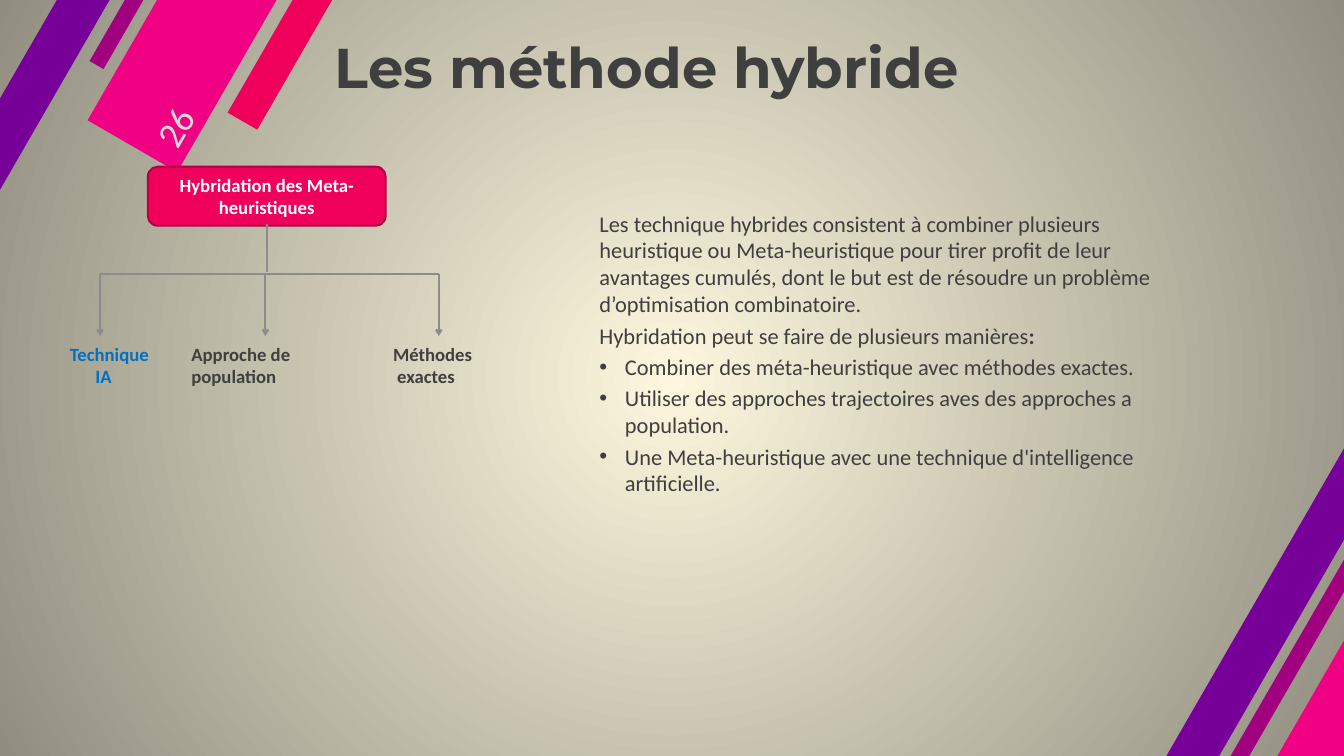
from lxml import etree
from pptx import Presentation
from pptx.dml.color import RGBColor
from pptx.enum.shapes import MSO_CONNECTOR, MSO_SHAPE
from pptx.enum.text import MSO_ANCHOR, MSO_AUTO_SIZE, PP_ALIGN
from pptx.oxml.ns import qn
from pptx.util import Inches, Pt

PINK = RGBColor(0xF0, 0x00, 0x82)
RED = RGBColor(0xEF, 0x00, 0x5A)
WINE = RGBColor(0xB1, 0x00, 0x43)
PLUM = RGBColor(0xA1, 0x00, 0x7E)
VIOLET = RGBColor(0x77, 0x00, 0x99)
DARK = RGBColor(0x3F, 0x3F, 0x3F)
GRAY = RGBColor(0x8C, 0x8C, 0x8C)
PALE = RGBColor(0xD9, 0xD9, 0xD9)
BLUE = RGBColor(0x00, 0x70, 0xC0)
WHITE = RGBColor(0xFF, 0xFF, 0xFF)
CREAM = RGBColor(0xFC, 0xF7, 0xDD)
STONE = RGBColor(0x91, 0x8E, 0x81)

RECT = MSO_SHAPE.RECTANGLE
ROUND = MSO_SHAPE.FLOWCHART_ALTERNATE_PROCESS
LINE = MSO_CONNECTOR.STRAIGHT
MIDDLE, TOP = MSO_ANCHOR.MIDDLE, MSO_ANCHOR.TOP
LEFT, CENTER = PP_ALIGN.LEFT, PP_ALIGN.CENTER
FIXED, GROW = MSO_AUTO_SIZE.NONE, MSO_AUTO_SIZE.SHAPE_TO_FIT_TEXT

COLS = 20
TILT = 300
INDENT = 0.38


class Deck:
    head, font = "Montserrat", "Calibri"

    def __init__(self):
        self.file = Presentation()
        self.file.slide_width = Inches(20)
        self.file.slide_height = Inches(11.25)
        self.cell = self.file.slide_width / COLS
        self.slide = self.file.slides.add_slide(self.file.slide_layouts[1])
        self.shapes = self.slide.shapes

    def grid(self, *spans):
        return [round(span * self.cell) for span in spans]

    def glow(self, inner, outer):
        fill = self.slide.background.fill
        fill.gradient()
        for stop, color, place in zip(fill.gradient_stops, (inner, outer), (0, 1)):
            stop.color.rgb = color
            stop.position = place
        lin = next(self.slide.element.iter(qn("a:lin")))
        ring = etree.Element(qn("a:path"), {"path": "circle"})
        etree.SubElement(ring, qn("a:fillToRect"), {side: "50000" for side in "ltrb"})
        lin.getparent().replace(lin, ring)

    def style(self, frame, size, color, bold=False, align=LEFT, font=None):
        for para in frame.paragraphs:
            para.alignment = align
            for run in para.runs:
                run.font.size = Pt(size)
                run.font.name = font or self.font
                run.font.bold = bold
                run.font.color.rgb = color

    def pad(self, frame, anchor):
        frame.word_wrap = True
        frame.auto_size = FIXED
        frame.vertical_anchor = anchor
        frame.margin_left, frame.margin_right = self.grid(0.18, 0.18)
        frame.margin_top, frame.margin_bottom = self.grid(0.09, 0.09)

    def block(self, kind, box, color):
        shape = self.shapes.add_shape(kind, *self.grid(*box))
        shape.shadow.inherit = False
        shape.fill.solid()
        shape.fill.fore_color.rgb = color
        shape.line.fill.background()
        return shape

    def band(self, box, color):
        self.block(RECT, box, color).rotation = TILT

    def place(self, holder, box):
        holder.left, holder.top, holder.width, holder.height = self.grid(*box)
        return holder.text_frame

    def title(self, text, box):
        frame = self.place(self.shapes.title, box)
        frame.text = text
        self.pad(frame, MIDDLE)
        self.style(frame, 60, DARK, True, font=self.head)

    def shift(self, para, left, hang, mark=None):
        props = para._p.get_or_add_pPr()
        margin, first = self.grid(left, hang)
        props.set("marL", str(margin))
        props.set("indent", str(first))
        if mark:
            etree.SubElement(props, qn("a:buChar"), {"char": mark})
        else:
            etree.SubElement(props, qn("a:buNone"))

    def body(self, intro, items, box):
        frame = self.place(self.slide.placeholders[1], box)
        frame.text = "\n".join(intro + items)
        self.pad(frame, TOP)
        for n, para in enumerate(frame.paragraphs):
            if n < len(intro):
                self.shift(para, 0, 0)
            else:
                self.shift(para, INDENT, -INDENT, "•")
        lead = frame.paragraphs[len(intro) - 1]
        colon = lead.add_run()
        colon.text = ":"
        self.style(frame, 24, DARK)
        colon.font.bold = True

    def page(self, text, box):
        shape = self.shapes.add_textbox(*self.grid(*box))
        shape.rotation = TILT
        shape.text_frame.text = text
        self.pad(shape.text_frame, MIDDLE)
        self.style(shape.text_frame, 40, PALE)

    def root(self, text, box):
        shape = self.block(ROUND, box, RED)
        shape.line.color.rgb = WINE
        shape.line.width = Pt(2)
        frame = shape.text_frame
        frame.text = text
        frame.word_wrap = True
        frame.vertical_anchor = MIDDLE
        self.style(frame, 20, WHITE, True, CENTER)

    def link(self, ends, arrow=False):
        wire = self.shapes.add_connector(LINE, *self.grid(*ends))
        wire.line.color.rgb = GRAY
        wire.line.width = Pt(2.25)
        if arrow:
            etree.SubElement(wire.line._get_or_add_ln(), qn("a:tailEnd"), {"type": "arrow"})
        etree.SubElement(wire._element.spPr, qn("a:effectLst"))

    def label(self, text, box, color, inset=0):
        frame = self.shapes.add_textbox(*self.grid(*box)).text_frame
        frame.text = text
        frame.word_wrap = True
        frame.auto_size = GROW
        self.style(frame, 20, color, True)
        if inset:
            self.shift(frame.paragraphs[-1], inset, 0)


def main():
    deck = Deck()
    deck.glow(CREAM, STONE)
    bands = [
        (-1.42, -7.16, 20.11, 0.51, RED),
        (-3.05, -7.29, 20.08, 1.54, PINK),
        (-3.59, -7.86, 20.11, 0.24, PLUM),
        (-5.83, -5.47, 20.06, 0.68, VIOLET),
        (13.68, 3.86, 20.08, 1.54, PINK),
        (12.9, 3.33, 20.11, 0.24, PLUM),
        (10.71, 5.73, 20.06, 0.68, VIOLET),
    ]
    for *box, color in bands:
        deck.band(box, color)

    deck.title("Les méthode hybride", (4.8, 0.45, 14.96, 1.08))
    deck.page(" 26", (1.47, 0.66, 3.32, 0.6))
    deck.body(
        [
            "Les technique hybrides consistent à combiner plusieurs heuristique ou "
            "Meta-heuristique pour tirer profit de leur avantages cumulés, dont le "
            "but est de résoudre un problème d’optimisation combinatoire.",
            "Hybridation peut se faire de plusieurs manières",
        ],
        [
            "Combiner des méta-heuristique avec méthodes exactes.",
            "Utiliser des approches trajectoires aves des approches a population.",
            "Une Meta-heuristique avec une technique d'intelligence artificielle.",
        ],
        (8.74, 3.03, 9.29, 6.77),
    )

    deck.root("Hybridation des Meta- heuristiques", (2.2, 2.48, 3.54, 0.88))
    rail, foot = 4.08, 5
    drops = (6.53, 3.95, 1.49)
    deck.link((3.97, 3.34, 3.97, 4.05))
    deck.link((drops[-1], rail, drops[0], rail))
    for col in drops:
        deck.link((col, rail, col, foot), True)

    leaves = [
        ("Méthodes\n exactes", 5.75, 1.51, DARK, 0),
        ("Approche de\npopulation", 2.75, 3.4, DARK, 0),
        ("Technique\nIA", 0.94, 1.59, BLUE, INDENT),
    ]
    for text, col, width, color, inset in leaves:
        deck.label(text, (col, 5.05, width, 0.77), color, inset)
    deck.file.save("out.pptx")


if __name__ == "__main__":
    main()
